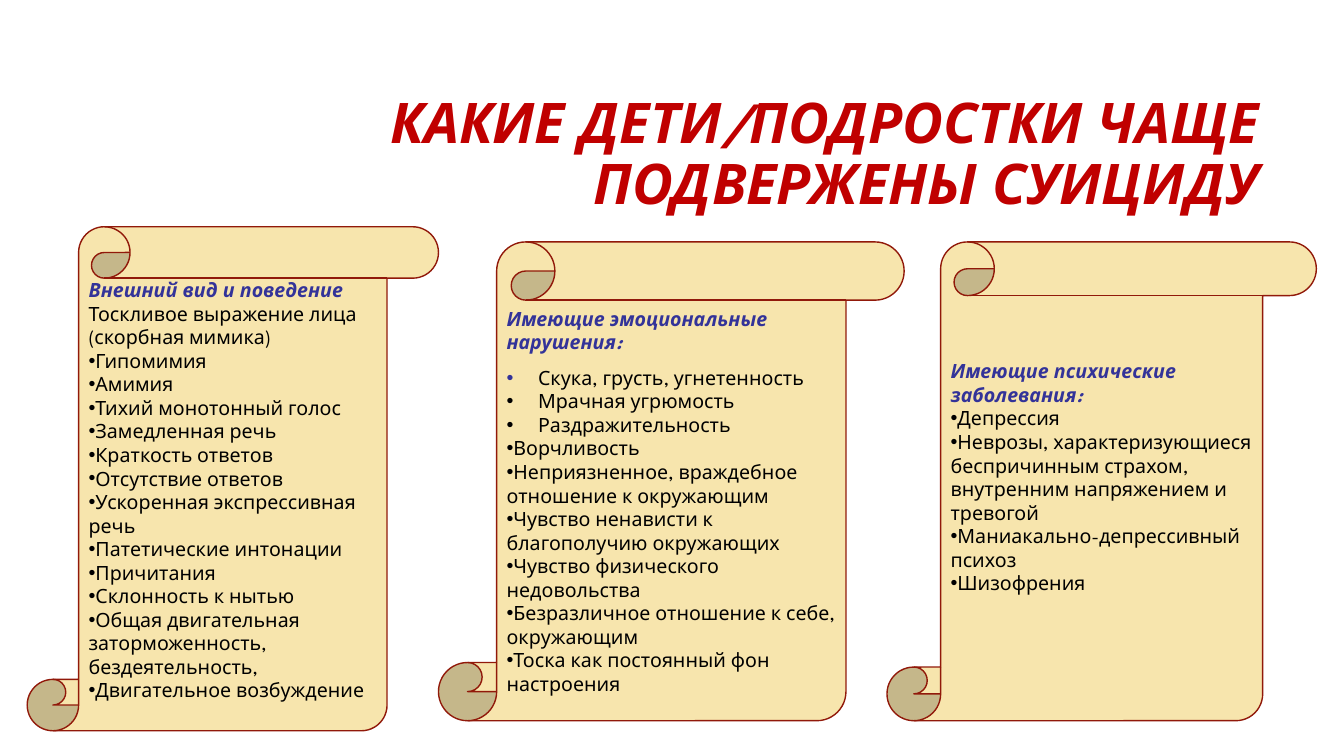
import pptx
import pptx.util
import pptx.dml.color
import pptx.enum.shapes
import pptx.enum.text
import lxml.etree

Pt = pptx.util.Pt
ENUM = pptx.enum.text

TITLE = "КАКИЕ ДЕТИ/ПОДРОСТКИ ЧАЩЕ ПОДВЕРЖЕНЫ СУИЦИДУ"
FACE = "League Spartan"
RED, BLUE, BLACK = "C00000", "333399", "000000"
SAND, BROWN = "F7E5AD", "91190A"

# box: left, top, width, height; inset: space above the text
# wide: number of items with a hanging indent
SCROLLS = [
    dict(box=(19.44, 162, 293.76, 360), inset=0, wide=0,
         head="Внешний вид и поведение ",
         tail="Тоскливое выражение лица (скорбная мимика)",
         items=["Гипомимия", "Амимия", "Тихий монотонный голос",
                "Замедленная речь", "Краткость ответов",
                "Отсутствие ответов", "Ускоренная экспрессивная речь",
                "Патетические интонации", "Причитания",
                "Склонность к нытью",
                "Общая двигательная заторможенность, бездеятельность,",
                "Двигательное возбуждение"]),
    dict(box=(313.2, 172.8, 332.64, 342), inset=4.5, wide=3,
         head="Имеющие эмоциональные нарушения:", tail="",
         items=["Скука, грусть, угнетенность", "Мрачная угрюмость",
                "Раздражительность", "Ворчливость",
                "Неприязненное, враждебное отношение к окружающим",
                "Чувство ненависти к благополучию окружающих",
                "Чувство физического недовольства",
                "Безразличное отношение к себе, окружающим",
                "Тоска как постоянный фон настроения"]),
    dict(box=(633.6, 172.8, 306.72, 342), inset=45.5, wide=0,
         head="Имеющие психические заболевания:", tail="",
         items=["Депрессия",
                "Неврозы, характеризующиеся беспричинным страхом, "
                "внутренним напряжением и тревогой",
                "Маниакально-депрессивный психоз", "Шизофрения"]),
]


def color(code):
    return pptx.dml.color.RGBColor.from_string(code)


def apply(target, style):
    for name, value in style.items():
        setattr(target, name, value)


def place(shape, box):
    names = ("left", "top", "width", "height")
    apply(shape, {n: Pt(v) for n, v in zip(names, box)})


def write(para, text, size, code, strong):
    run = para.add_run()
    run.text = text
    apply(run.font, dict(name=FACE, size=Pt(size), bold=strong, italic=strong))
    run.font.color.rgb = color(code)


def bullet(para, hang, code):
    props = para._p.get_or_add_pPr()
    props.set("marL", str(Pt(hang)))
    props.set("indent", str(-Pt(hang)))
    space = props.nsmap["a"]

    def add(parent, tag, **attrs):
        return lxml.etree.SubElement(parent, f"{{{space}}}{tag}", **attrs)

    add(add(props, "buClr"), "srgbClr", val=code)
    add(props, "buFont", typeface="Arial")
    add(props, "buChar", char="•")


def scroll(slide, box, inset, wide, head, tail, items):
    kind = pptx.enum.shapes.MSO_SHAPE.VERTICAL_SCROLL
    shape = slide.shapes.add_shape(kind, *[Pt(v) for v in box])
    shape.shadow.inherit = False
    shape.fill.solid()
    shape.fill.fore_color.rgb = color(SAND)
    shape.line.color.rgb = color(BROWN)
    shape.line.width = Pt(1)
    frame = shape.text_frame
    apply(frame, dict(word_wrap=True, margin_top=Pt(inset), margin_bottom=0,
                      vertical_anchor=ENUM.MSO_ANCHOR.TOP))
    first = frame.paragraphs[0]
    first.alignment = ENUM.PP_ALIGN.LEFT
    write(first, head, 14, BLUE, True)
    if tail:
        write(first, tail, 14, BLACK, False)
    for i, item in enumerate(items):
        para = frame.add_paragraph()
        para.alignment = ENUM.PP_ALIGN.LEFT
        lead = wide and i == 0
        if lead:
            para.space_before = Pt(8.8)
        bullet(para, 22.5 if i < wide else 0, BLUE if lead else BLACK)
        write(para, item, 14, BLACK, False)


def main():
    deck = pptx.Presentation()
    apply(deck, dict(slide_width=Pt(960), slide_height=Pt(540)))
    slide = deck.slides.add_slide(deck.slide_layouts[5])
    title = slide.shapes.title
    place(title, (228.24, 60.5, 678.24, 101.5))
    apply(title.text_frame, dict(word_wrap=True,
                                 auto_size=ENUM.MSO_AUTO_SIZE.NONE,
                                 vertical_anchor=ENUM.MSO_ANCHOR.MIDDLE))
    para = title.text_frame.paragraphs[0]
    apply(para, dict(alignment=ENUM.PP_ALIGN.RIGHT, line_spacing=0.9))
    write(para, TITLE, 40, RED, True)
    for data in SCROLLS:
        scroll(slide, **data)
    deck.save("out.pptx")


if __name__ == "__main__":
    main()
